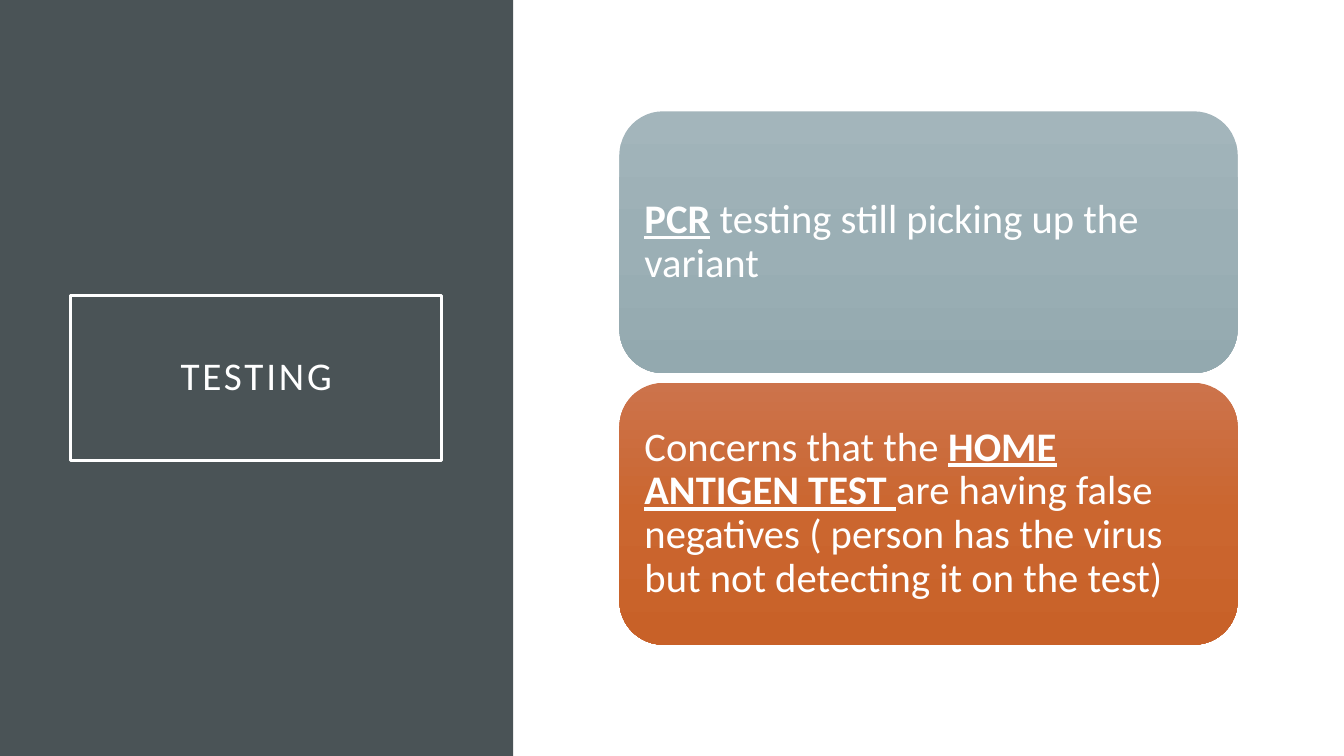
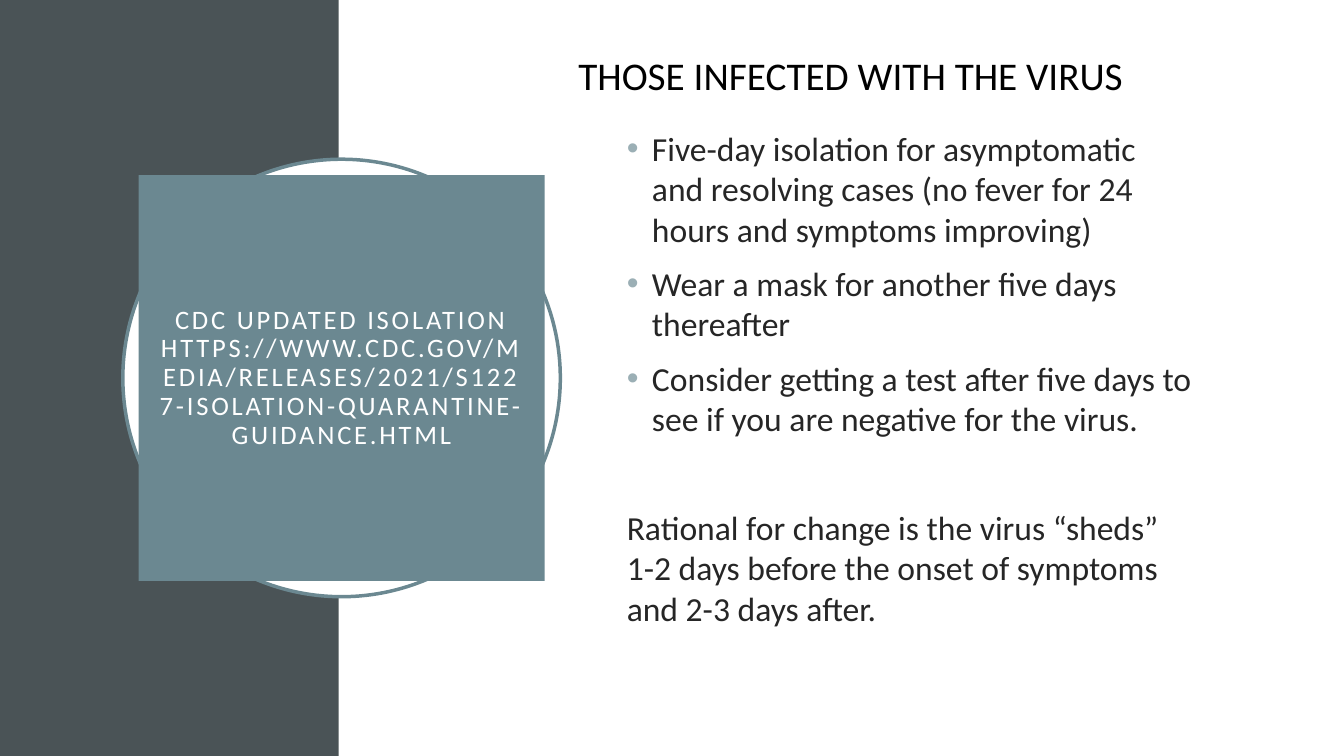
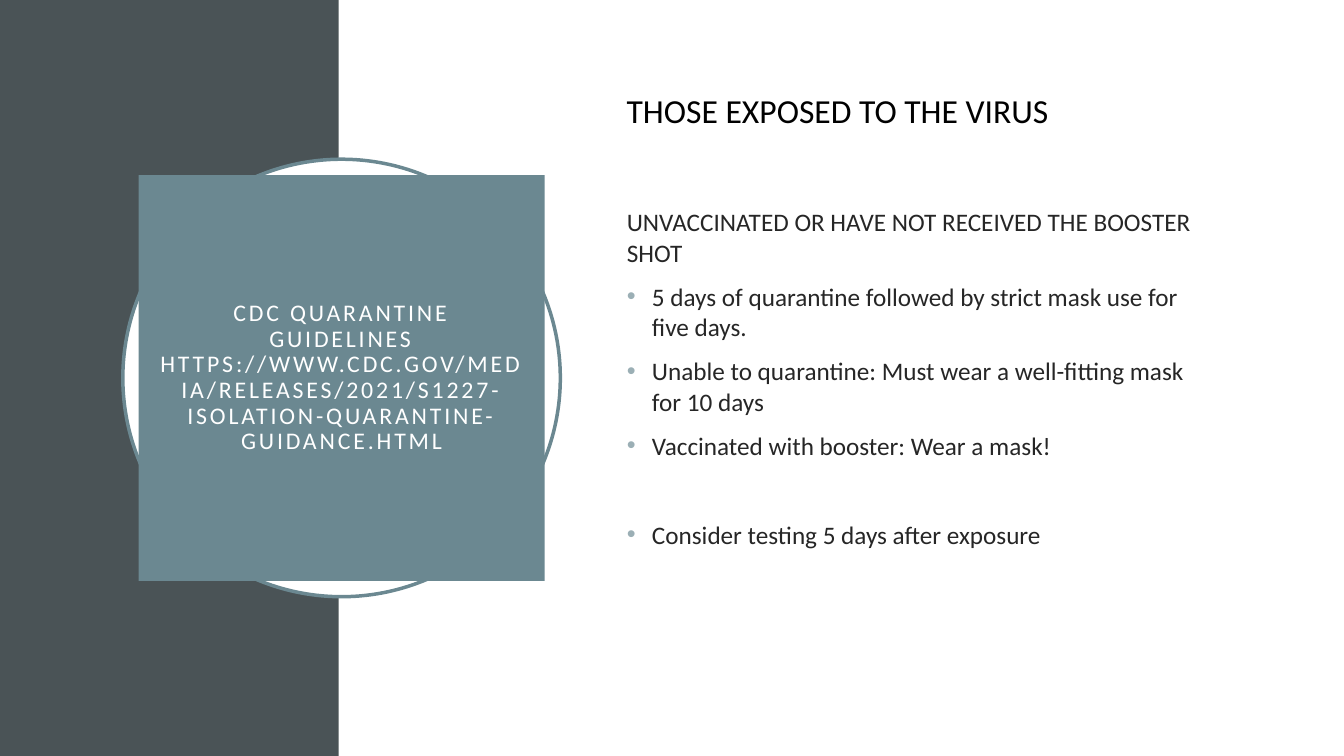
from copy import deepcopy

from lxml import etree
from pptx import Presentation
from pptx.dml.color import RGBColor
from pptx.enum.shapes import MSO_SHAPE
from pptx.enum.text import MSO_ANCHOR, MSO_AUTO_SIZE, PP_ALIGN
from pptx.oxml.ns import qn
from pptx.util import Pt

RECTANGLE, ROUNDED, OVAL = MSO_SHAPE.RECTANGLE, MSO_SHAPE.ROUNDED_RECTANGLE, MSO_SHAPE.OVAL
MIDDLE, TOP = MSO_ANCHOR.MIDDLE, MSO_ANCHOR.TOP
LEFT, CENTER = PP_ALIGN.LEFT, PP_ALIGN.CENTER
NO_FIT = MSO_AUTO_SIZE.NONE

FONT = "Calibri"
WHITE = RGBColor(0xFF, 0xFF, 0xFF)
BLACK = RGBColor(0x00, 0x00, 0x00)
INK = RGBColor(0x26, 0x26, 0x26)
SLATE = RGBColor(0x4A, 0x53, 0x56)
TEAL = RGBColor(0x6B, 0x88, 0x91)
BULLET = RGBColor(0x9B, 0xAF, 0xB5)
MIST_GRADIENT = (RGBColor(0xA3, 0xB5, 0xBB), BULLET, RGBColor(0x93, 0xA9, 0xAF))
RUST_GRADIENT = (RGBColor(0xCC, 0x73, 0x4B), RGBColor(0xCB, 0x66, 0x2F), RGBColor(0xC8, 0x61, 0x28))

WIDTH, HEIGHT = 960, 540
TITLE_ONLY, TITLE_AND_BODY = 5, 1
PARA_GAP = 10
LINE_HEIGHT = 1.22
BADGE_CENTER, RING_SIZE, BADGE_SIZE = 244, 312.5, 290

GUIDANCE_URL = "HTTPS://WWW.CDC.GOV/MEDIA/RELEASES/2021/S1227-ISOLATION-QUARANTINE-GUIDANCE.HTML"

TESTING_CARDS = [
    (MIST_GRADIENT, [("PCR", True), (" testing still picking up the variant", False)]),
    (RUST_GRADIENT, [
        ("Concerns that the ", False),
        ("HOME ANTIGEN TEST ", True),
        ("are having false negatives ( person has the virus but not detecting it on the test)", False),
    ]),
]

PLAIN, BULLETED = "plain", "bulleted"
GUIDELINES = [
    {
        "title": ["CDC UPDATED ISOLATION", GUIDANCE_URL],
        "title_size": 19,
        "heading": "THOSE INFECTED WITH THE VIRUS",
        "heading_box": (406, 33, 500, 41),
        "heading_size": 28,
        "body_size": 24,
        "body": [
            (BULLETED, "Five-day isolation for asymptomatic and resolving cases (no fever for 24 hours and symptoms improving)"),
            (BULLETED, "Wear a mask for another five days thereafter"),
            (BULLETED, "Consider getting a test after five days to see if you are negative for the virus."),
            (PLAIN, "Rational for change is the virus “sheds” 1-2 days before the onset of symptoms and 2-3 days after."),
        ],
    },
    {
        "title": ["CDC QUARANTINE GUIDELINES", GUIDANCE_URL],
        "title_size": 17,
        "heading": "THOSE EXPOSED TO THE VIRUS",
        "heading_box": (440.5, 60.5, 395, 36),
        "heading_size": 24,
        "body_size": 18,
        "body": [
            (PLAIN, "UNVACCINATED OR HAVE NOT RECEIVED THE BOOSTER SHOT"),
            (BULLETED, "5 days of quarantine followed by strict mask use for five days."),
            (BULLETED, "Unable to quarantine: Must wear a well-fitting mask for 10 days"),
            (BULLETED, "Vaccinated with booster: Wear a mask!"),
            (BULLETED, "Consider testing 5 days after exposure"),
        ],
    },
]


def place(shape, left, top, width, height):
    shape.left, shape.top = Pt(left), Pt(top)
    shape.width, shape.height = Pt(width), Pt(height)


def bring_to_front(shape):
    shape.element.getparent().append(shape.element)


def prepare_frame(shape, anchor, margin_x, margin_y):
    frame = shape.text_frame
    frame.word_wrap = True
    frame.auto_size = NO_FIT
    frame.vertical_anchor = anchor
    frame.margin_left = frame.margin_right = Pt(margin_x)
    frame.margin_top = frame.margin_bottom = Pt(margin_y)
    return frame


def add_span(para, text, size, color, strong=False):
    span = para.add_run()
    span.text = text
    span.font.name = FONT
    span.font.size = Pt(size)
    span.font.color.rgb = color
    span.font.bold = span.font.underline = strong
    return span


def add_shape(page, kind, box, fill=None, line=None):
    shape = page.shapes.add_shape(kind, *map(Pt, box))
    shape.shadow.inherit = False
    if fill is not None:
        shape.fill.solid()
        shape.fill.fore_color.rgb = fill
    if line is None:
        shape.line.fill.background()
    else:
        shape.line.color.rgb = line
        shape.line.width = Pt(2.5)
    return shape


def add_page(deck, layout, band_width):
    page = deck.slides.add_slide(deck.slide_layouts[layout])
    add_shape(page, RECTANGLE, (0, 0, band_width, HEIGHT), SLATE)
    return page


def write_title(page, lines, size, box):
    title = page.shapes.title
    place(title, *box)
    bring_to_front(title)
    para = prepare_frame(title, MIDDLE, 14.4, 14.4).paragraphs[0]
    para.alignment = CENTER
    para.line_spacing = 0.9
    for index, line in enumerate(lines):
        if index:
            para.add_line_break()
        span = add_span(para, line, size, WHITE)
        span.font._element.set("spc", "200")
    return title


def set_bullet(para, bulleted):
    props = para._p.get_or_add_pPr()
    indent = Pt(18) if bulleted else 0
    props.set("marL", str(indent))
    props.set("indent", str(-indent))
    if bulleted:
        color = etree.SubElement(props, qn("a:buClr"))
        etree.SubElement(color, qn("a:srgbClr"), val=str(BULLET))
        etree.SubElement(props, qn("a:buFont"), typeface="Arial")
        etree.SubElement(props, qn("a:buChar"), char="•")
    else:
        etree.SubElement(props, qn("a:buNone"))


def write_body(page, items, size):
    body = page.placeholders[1]
    place(body, 440.5, 110.5, 419, 319)
    bring_to_front(body)
    frame = prepare_frame(body, MIDDLE, 7.2, 3.6)
    for index, (style, text) in enumerate(items):
        para = frame.add_paragraph() if index else frame.paragraphs[0]
        set_apart = index == len(items) - 1
        para.alignment = LEFT
        para.line_spacing = 1.0
        para.space_before = Pt(round(2 * PARA_GAP + size * LINE_HEIGHT) if set_apart else PARA_GAP)
        set_bullet(para, style == BULLETED)
        add_span(para, text, size, INK)


def fill_gradient(shape, colors):
    shape.fill.gradient()
    shape.fill.gradient_angle = 270
    stop_list = shape.element.spPr.find(qn("a:gradFill")).find(qn("a:gsLst"))
    stop_list.append(deepcopy(stop_list[0]))
    for index, (stop, color) in enumerate(zip(shape.fill.gradient_stops, colors)):
        stop.position = index / (len(colors) - 1)
        stop.color.rgb = color


def build_testing(deck):
    page = add_page(deck, TITLE_ONLY, 366.5)
    title = write_title(page, ["TESTING"], 28, (50.5, 211, 265, 118))
    title.line.color.rgb = WHITE
    title.line.width = Pt(2.5)

    card_height, gap = 187, 7
    count = len(TESTING_CARDS)
    top = (HEIGHT - count * card_height - (count - 1) * gap) / 2
    for index, (colors, spans) in enumerate(TESTING_CARDS):
        box = (442.5, top + index * (card_height + gap), 441.5, card_height)
        card = add_shape(page, ROUNDED, box)
        fill_gradient(card, colors)
        para = prepare_frame(card, MIDDLE, 8.7, 8.7).paragraphs[0]
        para.alignment = LEFT
        para.line_spacing = 0.9
        for text, strong in spans:
            add_span(para, text, 29, WHITE, strong)


def centered_square(size):
    return BADGE_CENTER - size / 2, (HEIGHT - size) / 2, size, size


def build_guideline(deck, content):
    page = add_page(deck, TITLE_AND_BODY, 242)
    add_shape(page, OVAL, centered_square(RING_SIZE), WHITE, TEAL)
    title = write_title(page, content["title"], content["title_size"], centered_square(BADGE_SIZE))
    title.fill.solid()
    title.fill.fore_color.rgb = TEAL
    write_body(page, content["body"], content["body_size"])
    heading = page.shapes.add_textbox(*map(Pt, content["heading_box"]))
    para = prepare_frame(heading, TOP, 7.2, 3.6).paragraphs[0]
    add_span(para, content["heading"], content["heading_size"], BLACK)


def main():
    deck = Presentation()
    deck.slide_width, deck.slide_height = Pt(WIDTH), Pt(HEIGHT)
    build_testing(deck)
    for content in GUIDELINES:
        build_guideline(deck, content)
    deck.save("out.pptx")


if __name__ == "__main__":
    main()
